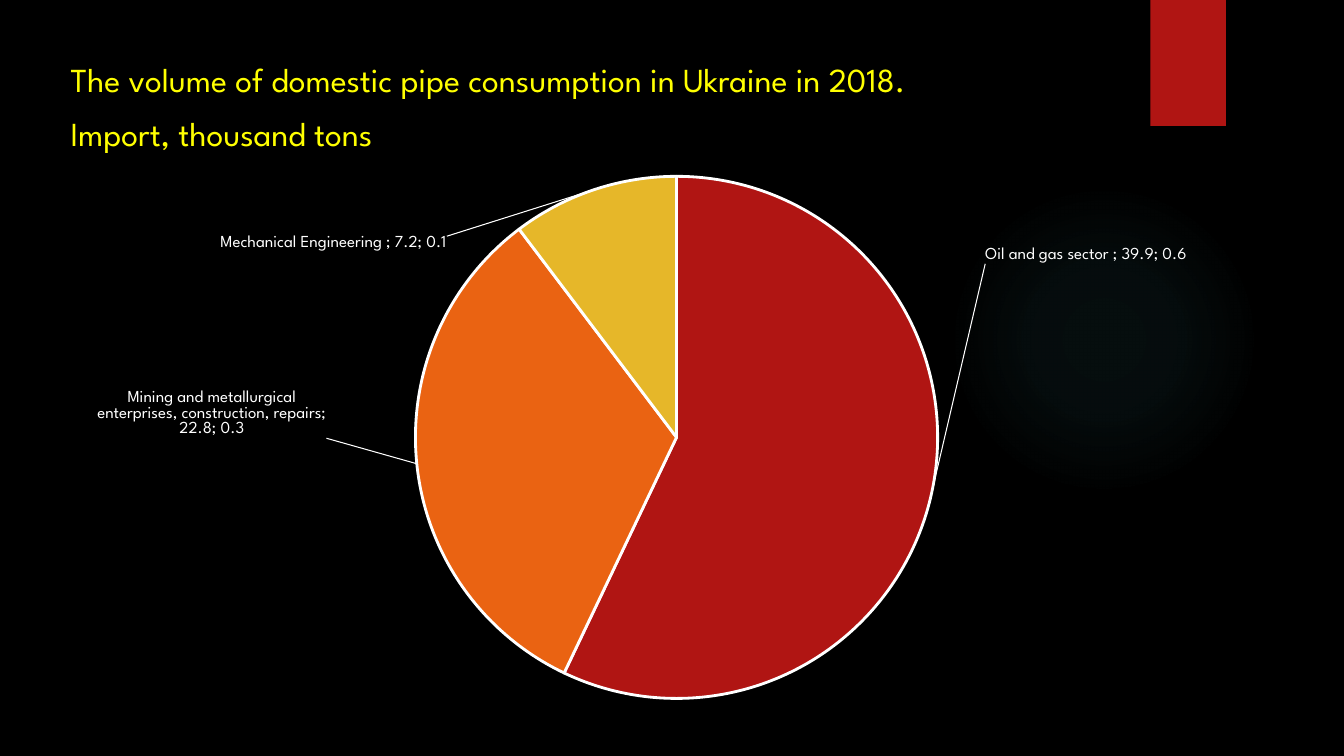
from dataclasses import dataclass

from lxml import etree
from pptx import Presentation
from pptx.chart.data import CategoryChartData
from pptx.dml.color import RGBColor
from pptx.enum.chart import XL_CHART_TYPE, XL_LABEL_POSITION
from pptx.enum.shapes import MSO_SHAPE
from pptx.enum.text import MSO_ANCHOR, PP_ALIGN
from pptx.oxml import parse_xml
from pptx.oxml.ns import qn
from pptx.util import Inches, Pt

PIE = XL_CHART_TYPE.PIE
OUTSIDE = XL_LABEL_POSITION.OUTSIDE_END
OVAL, RECTANGLE = MSO_SHAPE.OVAL, MSO_SHAPE.RECTANGLE
MIDDLE, LEFT = MSO_ANCHOR.MIDDLE, PP_ALIGN.LEFT

FONT = "League Spartan"
NUMBER_FORMAT = "#,##0.0"
COLORS = {
    "background": "000000",
    "title": "FFFF00",
    "text": "FFFFFF",
    "glow": "50B9C1",
    "red": "B01513",
    "orange": "EA6312",
    "yellow": "E6B729",
}
DRAWING_NS = "http://schemas.openxmlformats.org/drawingml/2006/main"
CHART_NS = "http://schemas.openxmlformats.org/drawingml/2006/chart"


@dataclass
class Sector:
    name: str
    tons: float
    color: str
    label_shift: tuple[float, float]  # share of chart width and height


SECTORS = [
    Sector("Oil and gas sector ", 39.9, "red", (0.04, -0.44)),
    Sector("Mining and metallurgical enterprises, construction, repairs",
           22.8, "orange", (-0.07, -0.13)),
    Sector("Mechanical Engineering ", 7.2, "yellow", (-0.12, 0.12)),
]


def rgb(name: str) -> RGBColor:
    return RGBColor.from_string(COLORS[name])


def set_font(font, *, size: float, color: str) -> None:
    font.name = FONT
    font.size = Pt(size)
    font.bold = False
    font.color.rgb = rgb(color)


def add_plain_shape(page, kind, left: float, top: float, width: float,
                    height: float, *, color: str):
    shape = page.shapes.add_shape(kind, Inches(left), Inches(top),
                                  Inches(width), Inches(height))
    shape.shadow.inherit = False
    shape.fill.solid()
    shape.fill.fore_color.rgb = rgb(color)
    shape.line.fill.background()
    return shape


def add_glow(page) -> None:
    glow = add_plain_shape(page, OVAL, 9.41, 1.83, 3.08, 3.08, color="glow")
    stops = "".join(
        f'<a:gs pos="{place * 1000}"><a:srgbClr val="{COLORS["glow"]}">'
        f'<a:alpha val="{opacity * 1000}"/></a:srgbClr></a:gs>'
        for place, opacity in [(0, 7), (36, 6), (69, 0)])
    gradient = parse_xml(
        f'<a:gradFill xmlns:a="{DRAWING_NS}"><a:gsLst>{stops}</a:gsLst>'
        '<a:path path="circle">'
        '<a:fillToRect l="50000" t="50000" r="50000" b="50000"/>'
        '</a:path></a:gradFill>')
    solid = glow.element.spPr.find(qn("a:solidFill"))
    solid.getparent().replace(solid, gradient)


def add_title(page, text: str) -> None:
    title = page.shapes.title
    title.left, title.top = Inches(0.6), Inches(0.5)
    title.width, title.height = Inches(11.97), Inches(0.97)
    frame = title.text_frame
    frame.word_wrap = True
    frame.vertical_anchor = MIDDLE
    frame.text = text
    para = frame.paragraphs[0]
    para.alignment = LEFT
    para.line_spacing = 1.33
    for span in para.runs:
        set_font(span.font, size=24, color="title")
    # Bring the title in front of the decorations
    title.element.getparent().append(title.element)


def manual_layout(**values):
    """Make a chart layout element from its named values."""
    layout = etree.Element(qn("c:layout"), nsmap={"c": CHART_NS})
    manual = etree.SubElement(layout, qn("c:manualLayout"))
    for name, value in values.items():
        etree.SubElement(manual, qn(f"c:{name}")).set("val", str(value))
    return layout


def show_parts(labels) -> None:
    """Show category, value and percentage, split by semicolons."""
    for name in ("showVal", "showCatName", "showPercent"):
        labels.find(qn(f"c:{name}")).set("val", "1")
    separator = etree.Element(qn("c:separator"))
    separator.text = "; "
    before = labels.find(qn("c:showBubbleSize"))
    if before is None:
        before = labels.find(qn("c:showPercent"))
    before.addnext(separator)


def format_slice(point, sector: Sector) -> None:
    point.format.fill.solid()
    point.format.fill.fore_color.rgb = rgb(sector.color)
    point.format.line.color.rgb = rgb("text")
    point.format.line.width = Pt(2)
    point.data_label.position = OUTSIDE
    set_font(point.data_label.font, size=12, color="text")


def format_labels(series) -> None:
    labels = series.data_labels
    labels.show_value = labels.show_percentage = True
    labels.show_category_name = True
    labels.number_format = NUMBER_FORMAT
    labels.number_format_is_linked = False
    labels.position = OUTSIDE
    set_font(labels.font, size=12, color="text")

    group = series.data_labels._element
    show_parts(group)
    for label, sector in zip(group.findall(qn("c:dLbl")), SECTORS):
        show_parts(label)
        x, y = sector.label_shift
        layout = manual_layout(x=x, y=y)
        label.find(qn("c:idx")).addnext(layout)
        number = etree.Element(qn("c:numFmt"), formatCode=NUMBER_FORMAT,
                               sourceLinked="0")
        layout.addnext(number)

    # Leader lines
    for old in group.findall(qn("c:showLeaderLines")):
        group.remove(old)
    etree.SubElement(group, qn("c:showLeaderLines")).set("val", "1")
    group.append(parse_xml(
        f'<c:leaderLines xmlns:c="{CHART_NS}" xmlns:a="{DRAWING_NS}">'
        '<c:spPr><a:ln w="9525"><a:solidFill>'
        f'<a:srgbClr val="{COLORS["text"]}"/>'
        '</a:solidFill></a:ln></c:spPr></c:leaderLines>'))


def add_pie(page) -> None:
    data = CategoryChartData(number_format=NUMBER_FORMAT)
    data.categories = [sector.name for sector in SECTORS]
    data.add_series("Series 1", [sector.tons for sector in SECTORS])
    chart = page.shapes.add_chart(PIE, Inches(0.6), Inches(1.47),
                                  Inches(11.97), Inches(5.6), data).chart
    chart.has_title = False
    chart.has_legend = False
    set_font(chart.font, size=10, color="text")
    plot = chart.plots[0]
    plot.vary_by_categories = True
    series = plot.series[0]
    for index, sector in enumerate(SECTORS):
        format_slice(series.points[index], sector)
    format_labels(series)

    # Place of the pie inside the chart
    area = chart.element.find(f".//{qn('c:plotArea')}")
    for old in area.findall(qn("c:layout")):
        area.remove(old)
    area.insert(0, manual_layout(layoutTarget="inner", xMode="edge",
                                 yMode="edge", x=0.294, y=0.05,
                                 w=0.433, h=0.925))


def main() -> None:
    deck = Presentation()
    deck.slide_width, deck.slide_height = Inches(13.33), Inches(7.5)
    page = deck.slides.add_slide(deck.slide_layouts[5])
    page.background.fill.solid()
    page.background.fill.fore_color.rgb = rgb("background")
    add_glow(page)
    add_plain_shape(page, RECTANGLE, 11.41, 0, 0.75, 1.25, color="red")
    add_title(page, "The volume of domestic pipe consumption in Ukraine "
                    "in 2018.\vImport, thousand tons")
    add_pie(page)
    deck.save("out.pptx")


if __name__ == "__main__":
    main()
